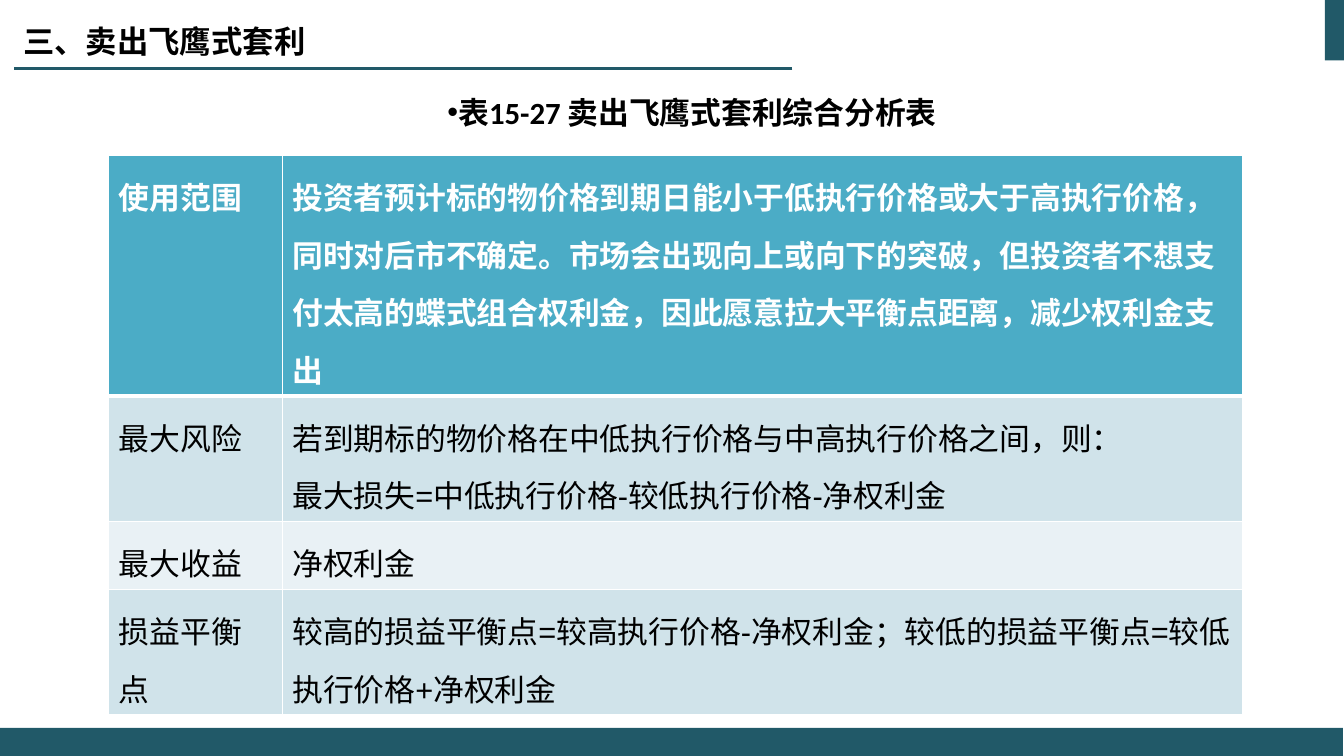
"""Build the slide that sums up the short condor spread in a table."""
from lxml.etree import SubElement
from pptx import Presentation
from pptx.dml.color import RGBColor
from pptx.enum.shapes import MSO_CONNECTOR, MSO_SHAPE
from pptx.enum.text import MSO_ANCHOR, PP_ALIGN
from pptx.oxml import parse_xml
from pptx.oxml.ns import nsdecls, qn
from pptx.util import Inches, Pt

HUES = {"teal": "215968", "head": "4BACC6", "band": "D0E3EA",
        "pale": "E9F1F5", "white": "FFFFFF", "black": "000000"}
CJK = "Noto Sans CJK SC"


def hue(name):
    return RGBColor.from_string(HUES[name])


def write(para, text, size, face, tint, bold):
    run = para.add_run()
    run.text = text
    font = run.font
    font.size, font.name, font.bold = Pt(size), face, bold
    font.color.rgb = hue(tint)
    SubElement(run._r.get_or_add_rPr(), qn("a:ea")).set("typeface", CJK)


deck = Presentation()
deck.slide_width, deck.slide_height = Inches(13.33), Inches(7.5)
slide = deck.slides.add_slide(deck.slide_layouts[6])
shapes = slide.shapes

for spot in [(13.14, 0, 0.2, 0.6), (0, 7.22, 13.32, 0.28)]:
    bar = shapes.add_shape(MSO_SHAPE.RECTANGLE, *map(Inches, spot))
    bar.shadow.inherit = False
    bar.fill.solid()
    bar.fill.fore_color.rgb = hue("teal")
    bar.line.fill.background()

rule = shapes.add_connector(MSO_CONNECTOR.STRAIGHT, Inches(7.86), Inches(0.68),
                            Inches(0.14), Inches(0.68))
rule.line.color.rgb = hue("teal")
rule.line.width = Pt(1.5)
SubElement(rule._element.spPr, qn("a:effectLst"))

texts = [
    ((0.68, 0.84, 12.37, 0.5), "表15-27 卖出飞鹰式套利综合分析表", 22, "Calibri"),
    ((0.13, -0.07, 10.88, 0.96), "三、卖出飞鹰式套利", 22.4, CJK),
]
for spot, text, size, face in texts:
    frame = shapes.add_textbox(*map(Inches, spot)).text_frame
    frame.word_wrap = True
    frame.vertical_anchor = MSO_ANCHOR.MIDDLE
    para = frame.paragraphs[0]
    if face == "Calibri":
        para.alignment = PP_ALIGN.CENTER
        para.line_spacing = Pt(29.4)
        props = para._p.get_or_add_pPr()
        props.set("marL", "0")
        props.set("indent", "0")
        SubElement(props, qn("a:buFont")).set("typeface", "Arial")
        SubElement(props, qn("a:buChar")).set("char", "•")
    write(para, text, size, face, "black", True)

rows = [
    (2.39, "head", "使用范围", [
        "投资者预计标的物价格到期日能小于低执行价格或大于高执行价格，"
        "同时对后市不确定。市场会出现向上或向下的突破，但投资者不想支付"
        "太高的蝶式组合权利金，因此愿意拉大平衡点距离，减少权利金支出"]),
    (1.24, "band", "最大风险", [
        "若到期标的物价格在中低执行价格与中高执行价格之间，则：",
        "最大损失=中低执行价格-较低执行价格-净权利金"]),
    (0.68, "pale", "最大收益", ["净权利金"]),
    (1.24, "band", "损益平衡点", [
        "较高的损益平衡点=较高执行价格-净权利金；"
        "较低的损益平衡点=较低执行价格+净权利金"]),
]
table = shapes.add_table(len(rows), 2, Inches(1.08), Inches(1.54),
                         Inches(11.24), Inches(5.55)).table
for col, width in zip(table.columns, (1.72, 9.52)):
    col.width = Inches(width)

for i, (height, fill, label, lines) in enumerate(rows):
    table.rows[i].height = Inches(height)
    for cell, paras in zip(table.rows[i].cells, ([label], lines)):
        thick = {"L": 1, "R": 1, "T": 3 if i == 1 else 1, "B": 3 if i == 0 else 1}
        for side, width in thick.items():
            cell._tc.get_or_add_tcPr().append(parse_xml(
                f'<a:ln{side} {nsdecls("a")} w="{Pt(width)}"><a:solidFill>'
                f'<a:srgbClr val="{HUES["white"]}"/></a:solidFill></a:ln{side}>'))
        cell.fill.solid()
        cell.fill.fore_color.rgb = hue(fill)
        frame = cell.text_frame
        for j, text in enumerate(paras):
            para = frame.add_paragraph() if j else frame.paragraphs[0]
            para.line_spacing = 1.3
            write(para, text, 22, "Arial", "black" if i else "white", i == 0)

deck.save("out.pptx")
